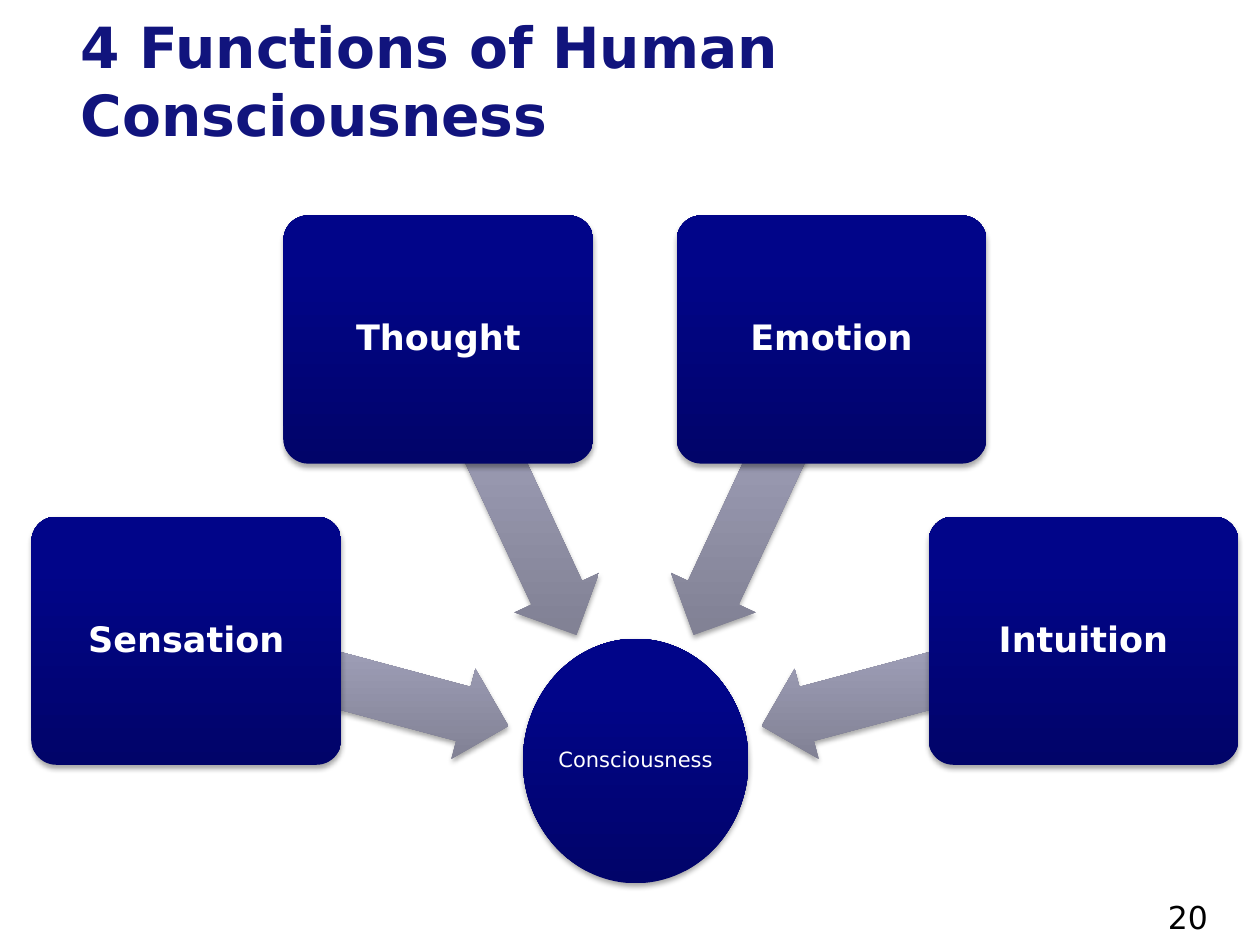
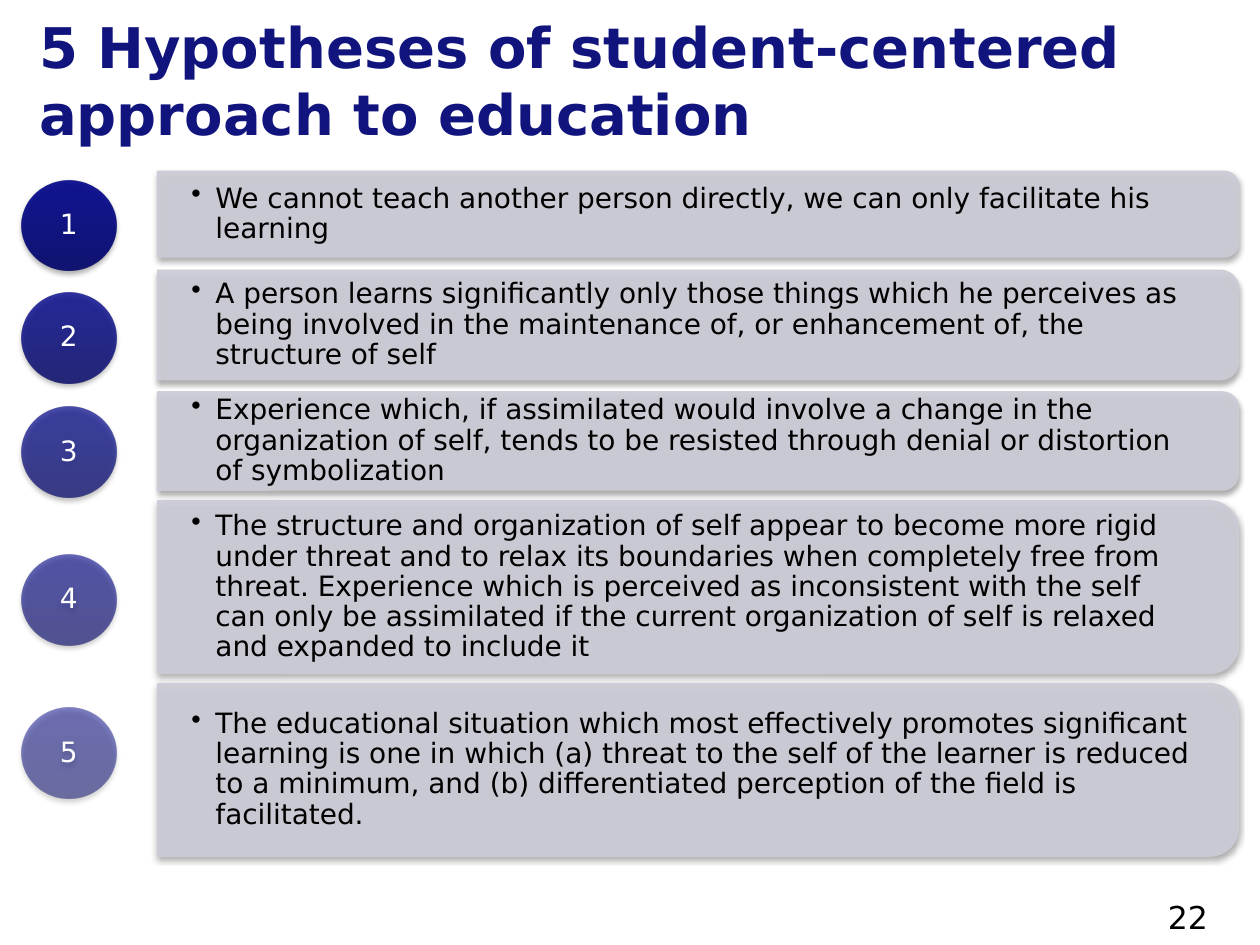
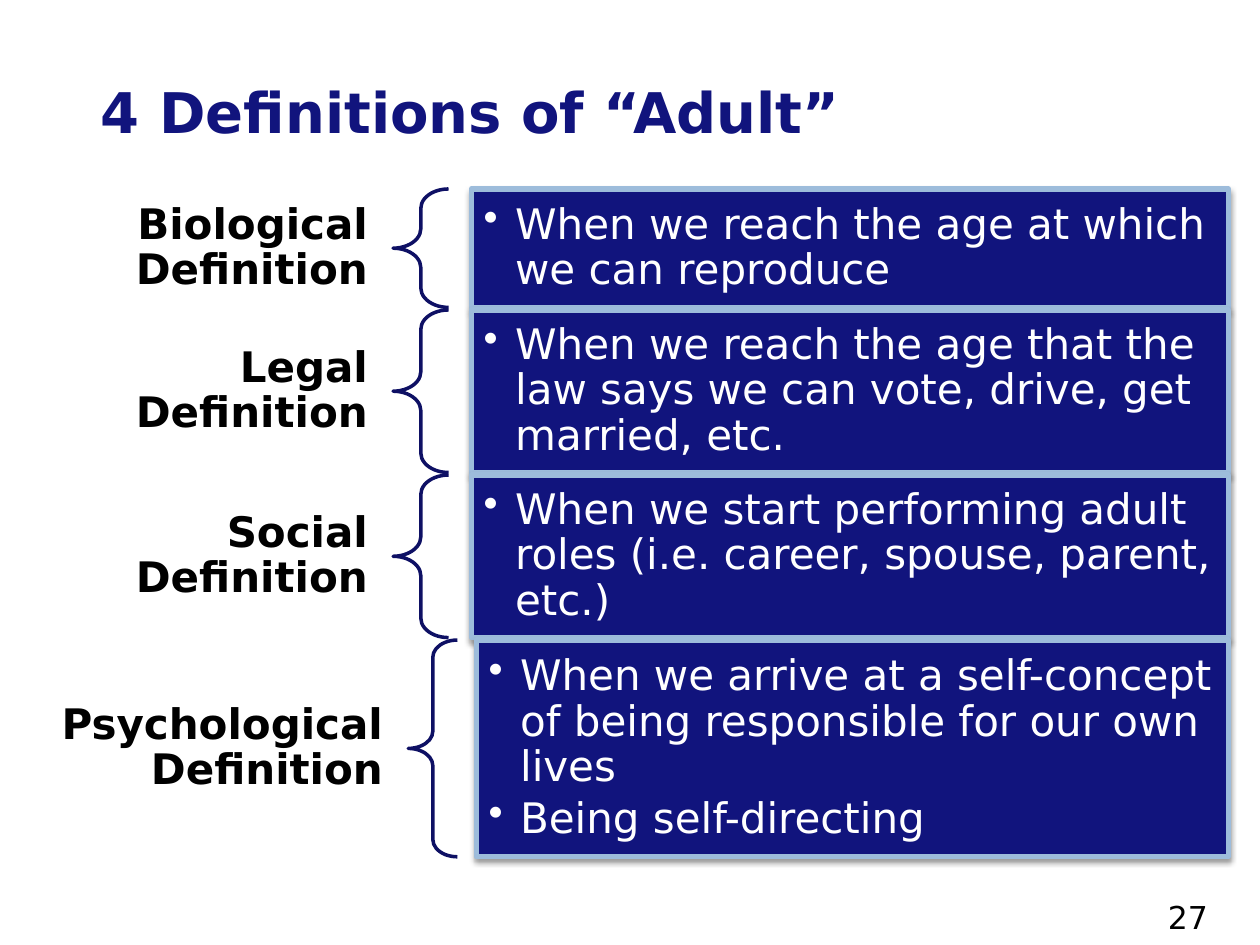
import dataclasses

import pptx
import pptx.dml.color
import pptx.enum.shapes
import pptx.enum.text
import pptx.oxml
import pptx.oxml.ns
import pptx.util

Inches = pptx.util.Inches
Pt = pptx.util.Pt
MSO = pptx.enum.shapes.MSO_SHAPE
ALIGN = pptx.enum.text.PP_ALIGN
ANCHOR = pptx.enum.text.MSO_ANCHOR
qn = pptx.oxml.ns.qn


@dataclasses.dataclass(frozen=True)
class Theme:
    font: str = "DejaVu Sans"
    navy: str = "11147D"
    brace: str = "0E1064"
    sky: str = "9DBCDB"
    bar: str = "CCCCD7"
    white: str = "FFFFFF"
    black: str = "000000"
    blue_stops: tuple = ((0, "010469"), (80, "010589"), (100, "00048A"))
    grey_stops: tuple = ((0, "7E7E91"), (80, "A3A3BC"), (100, "A3A4BE"))
    title: float = 32
    definition: float = 24
    function: float = 20
    page: float = 18
    hypothesis: float = 16
    hub: float = 12


T = Theme()
MIDDLE_X = 5.04
BAR_X, BAR_W = 1.25, 8.58

FUNCTIONS = [
    (("Sensation", "Intuition"), 0.25, 4.1, (1.44, 5.05, 2.64, 195)),
    (("Thought", "Emotion"), 2.25, 1.71, (2.74, 3.5, 2.58, 245)),
]

HYPOTHESES = [
    (1.7, 0.68, 1.43, "We cannot teach another person directly, we can only "
     "facilitate his learning"),
    (2.58, 0.87, 2.32, "A person learns significantly only those things which he "
     "perceives as being involved in the maintenance of, or enhancement of, the "
     "structure of self"),
    (3.5, 0.78, 3.23, "Experience which, if assimilated would involve a change in the "
     "organization of self, tends to be resisted through denial or distortion of "
     "symbolization"),
    (4.66, 1.37, 4.4, "The structure and organization of self appear to become more "
     "rigid under threat and to relax its boundaries when completely free from threat. "
     "Experience which is perceived as inconsistent with the self can only be "
     "assimilated if the current organization of self is relaxed and expanded to "
     "include it"),
    (6.11, 1.37, 5.62, "The educational situation which most effectively promotes "
     "significant learning is one in which (a) threat to the self of the learner is "
     "reduced to a minimum, and (b) differentiated perception of the field is "
     "facilitated."),
]

WIDE = (3.11, 0.44, 3.74)
NARROW = (3.23, 0.39, 3.78)
DEFINITIONS = [
    ("Biological Definition", 0.94, WIDE,
     ["When we reach the age at which we can reproduce"]),
    ("Legal Definition", 1.29, WIDE,
     ["When we reach the age that the law says we can vote, drive, get married, etc."]),
    ("Social Definition", 1.29, WIDE,
     ["When we start performing adult roles (i.e. career, spouse, parent, etc.)"]),
    ("Psychological Definition", 1.72, NARROW,
     ["When we arrive at a self-concept of being responsible for our own lives",
      "Being self-directing"]),
]


def rgb(color):
    return pptx.dml.color.RGBColor.from_string(color)


def xml(text):
    head, rest = text.split(" ", 1)
    return pptx.oxml.parse_xml(f"{head} {pptx.oxml.ns.nsdecls('a')} {rest}")


def set_all(target, values):
    for name, value in values.items():
        setattr(target, name, value)


def write(s, paragraphs, size, color, bold=False, align=ALIGN.CENTER,
          anchor=ANCHOR.MIDDLE, inset=(0.01, 0.01), left=0, hang=0,
          spacing=0.9, after=0):
    tf = s.text_frame
    x, y = map(Inches, inset)
    set_all(tf, {
        "word_wrap": True, "auto_size": pptx.enum.text.MSO_AUTO_SIZE.NONE,
        "vertical_anchor": anchor, "margin_left": x, "margin_right": x,
        "margin_top": y, "margin_bottom": y,
    })
    for i, text in enumerate(paragraphs):
        p = tf.paragraphs[0] if i == 0 else tf.add_paragraph()
        pPr = p._p.get_or_add_pPr()
        pPr.set("marL", str(Inches(left + hang)))
        pPr.set("indent", str(Inches(-hang)))
        if hang:
            pPr.append(xml('<a:buChar char="•"/>'))
        set_all(p, {"alignment": align, "line_spacing": spacing,
                    "space_before": Pt(0), "space_after": Pt(after)})
        r = p.add_run()
        r.text = text
        set_all(r.font, {"name": T.font, "size": Pt(size), "bold": bold})
        r.font.color.rgb = rgb(color)


def add_shape(slide, kind, at, fill=None, stops=None, line=None, width=0,
              alpha=100, shadow=35, rotation=0, adjust=()):
    s = slide.shapes.add_shape(kind, *map(Inches, at))
    s.rotation = rotation
    for i, value in enumerate(adjust):
        s.adjustments[i] = value
    spPr = s._element.spPr
    if fill:
        s.fill.solid()
        s.fill.fore_color.rgb = rgb(fill)
    else:
        s.fill.background()
    if stops:
        marks = "".join(f'<a:gs pos="{pos * 1000}"><a:srgbClr val="{c}"/></a:gs>'
                        for pos, c in stops)
        spPr.replace(spPr.find(qn("a:noFill")), xml(
            f'<a:gradFill rotWithShape="0"><a:gsLst>{marks}</a:gsLst>'
            '<a:lin ang="16200000" scaled="0"/></a:gradFill>'))
    if line:
        s.line.color.rgb = rgb(line)
        s.line.width = Pt(width)
    else:
        s.line.fill.background()
    if alpha < 100:
        for color in list(spPr.iter(qn("a:srgbClr"))):
            color.append(xml(f'<a:alpha val="{alpha * 1000}"/>'))
    s.shadow.inherit = False
    if shadow:
        spPr.find(qn("a:effectLst")).append(xml(
            f'<a:outerShdw blurRad="{Pt(3.1)}" dist="{Pt(1.8)}" dir="5400000" '
            f'rotWithShape="0"><a:srgbClr val="{T.black}">'
            f'<a:alpha val="{shadow * 1000}"/></a:srgbClr></a:outerShdw>'))
    return s


def add_text(slide, at, paragraphs, size, color, **style):
    s = slide.shapes.add_textbox(*map(Inches, at))
    write(s, paragraphs, size, color, **style)


def new_slide(prs, title, page, at, size=T.title, left=0.21):
    slide = prs.slides.add_slide(prs.slide_layouts[5])
    s = slide.shapes.title
    set_all(s, dict(zip(("left", "top", "width", "height"), map(Inches, at))))
    write(s, [title], size, T.navy, bold=True, align=ALIGN.LEFT,
          inset=(0.1, 0.05), left=left, spacing=1)
    add_text(slide, (9.17, 7.08, 0.83, 0.27), [page], T.page, T.black,
             align=ALIGN.LEFT, anchor=ANCHOR.TOP, inset=(0.1, 0.05), spacing=1)
    return slide


def mirror(x, width):
    return 2 * MIDDLE_X - x - width


def add_function(slide, name, x, y, arrow):
    arrow_x, arrow_y, arrow_w, angle = arrow
    add_shape(slide, MSO.LEFT_ARROW, (arrow_x, arrow_y, arrow_w, 0.74),
              stops=T.grey_stops, rotation=angle, adjust=(0.6, 0.5))
    s = add_shape(slide, MSO.ROUNDED_RECTANGLE, (x, y, 2.46, 1.97),
                  stops=T.blue_stops, adjust=(0.1,))
    write(s, [name], T.function, T.white, bold=True, inset=(0.04, 0.04))


def add_hypothesis(slide, number, middle, height, circle_y, text):
    add_shape(slide, MSO.ROUND_2_SAME_RECTANGLE,
              (BAR_X + (BAR_W - height) / 2, middle - BAR_W / 2, height, BAR_W),
              fill=T.bar, line=T.bar, width=0.75, alpha=90, rotation=90)
    add_text(slide, (BAR_X, middle - height / 2, BAR_W - 0.04, height), [text],
             T.hypothesis, T.black, align=ALIGN.LEFT, inset=(0.27, 0.05), hang=0.19)
    s = add_shape(slide, MSO.OVAL, (0.17, circle_y, 0.75, 0.72),
                  stops=T.blue_stops, alpha=100 - 10 * number)
    write(s, [str(number)], T.hypothesis, T.white)


def add_definition(slide, y, label, height, columns, lines):
    label_w, brace_w, box_x = columns
    add_text(slide, (0, y, label_w, height), [label], T.definition, T.black,
             bold=True, align=ALIGN.RIGHT, inset=(0.19, 0.07))
    add_shape(slide, MSO.LEFT_BRACE, (label_w + 0.01, y, brace_w, height),
              line=T.brace, width=2, shadow=0, adjust=(0.35, 0.5))
    s = add_shape(slide, MSO.RECTANGLE, (box_x, y, 9.75 - box_x, height),
                  fill=T.navy, line=T.sky, width=3, shadow=38)
    write(s, lines, T.definition, T.white, align=ALIGN.LEFT, inset=(0.1, 0.1),
          hang=0.25, after=3.6)


def functions_slide(prs):
    slide = new_slide(prs, "4 Functions of Human Consciousness", "20",
                      (0.33, 0.17, 9.5, 0.92), size=32.4)
    s = add_shape(slide, MSO.OVAL, (4.15, 5.07, 1.79, 1.94), stops=T.blue_stops)
    write(s, ["Consciousness"], T.hub, T.white)
    for (left_name, right_name), x, y, arrow in FUNCTIONS:
        arrow_x, arrow_y, arrow_w, angle = arrow
        add_function(slide, left_name, x, y, arrow)
        add_function(slide, right_name, mirror(x, 2.46), y,
                     (mirror(arrow_x, arrow_w), arrow_y, arrow_w, 540 - angle))


def hypotheses_slide(prs):
    slide = new_slide(prs, "5 Hypotheses of student-centered approach to education",
                      "22", (0, 0.17, 10, 0.92))
    for number, row in enumerate(HYPOTHESES, 1):
        add_hypothesis(slide, number, *row)


def definitions_slide(prs):
    slide = new_slide(prs, "4 Definitions of “Adult”", "27",
                      (0.33, 0.42, 9.5, 0.92), left=0.37)
    y = 1.5
    for label, height, columns, lines in DEFINITIONS:
        add_definition(slide, y, label, height, columns, lines)
        y += height + 0.02


def main():
    prs = pptx.Presentation()
    prs.slide_width, prs.slide_height = Inches(10), Inches(7.5)
    functions_slide(prs)
    hypotheses_slide(prs)
    definitions_slide(prs)
    prs.save("out.pptx")


if __name__ == "__main__":
    main()
